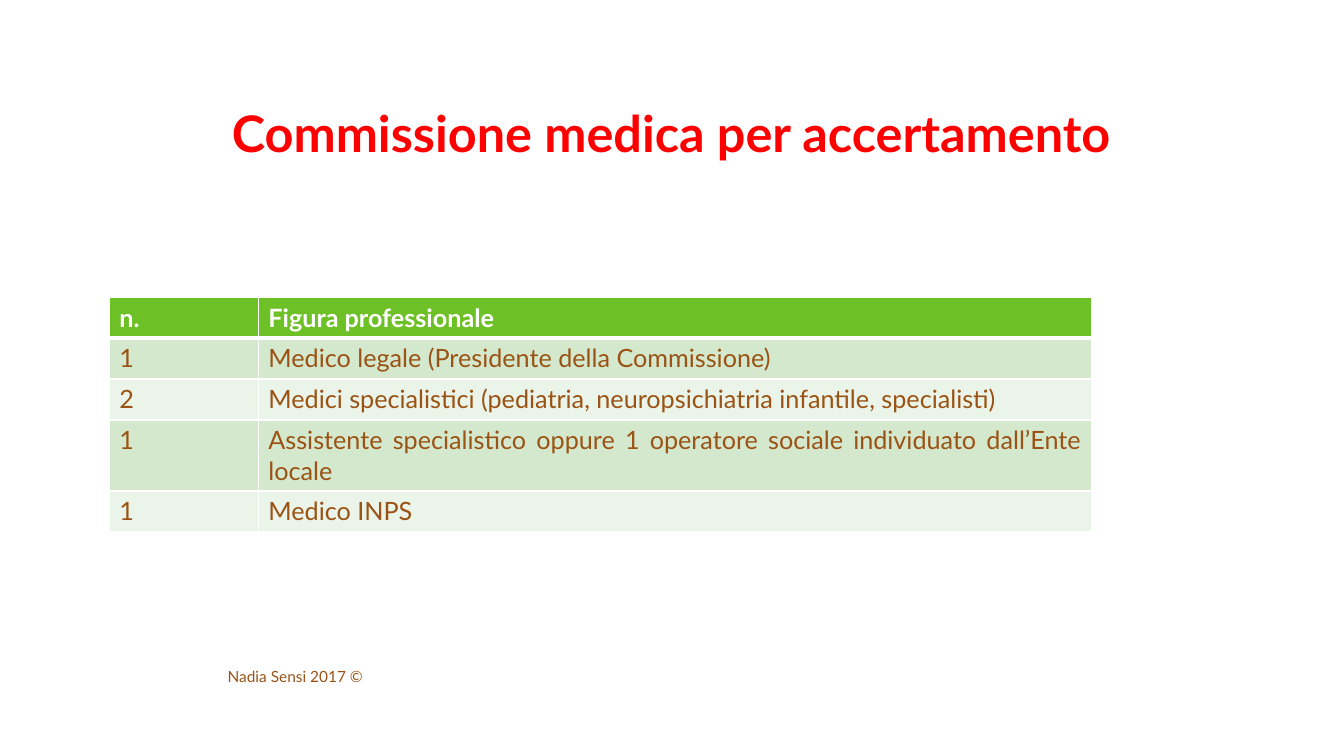
from dataclasses import dataclass
from typing import Any

from lxml import etree
from pptx import Presentation
from pptx.dml.color import RGBColor
from pptx.enum.text import MSO_ANCHOR, MSO_AUTO_SIZE, PP_ALIGN
from pptx.oxml.ns import qn
from pptx.util import Pt

LEFT, CENTER, JUSTIFY = PP_ALIGN.LEFT, PP_ALIGN.CENTER, PP_ALIGN.JUSTIFY
MIDDLE, BOTTOM = MSO_ANCHOR.MIDDLE, MSO_ANCHOR.BOTTOM
NO_AUTOFIT = MSO_AUTO_SIZE.NONE
TITLE_ONLY_LAYOUT = 5

RED, WHITE, BROWN = "FF0000", "FFFFFF", "9A5315"
GREEN, BAND_DARK, BAND_LIGHT = "6DC025", "D4E8CD", "EBF4E8"

TITLE_FORMAT = {"name": "Lato", "size": Pt(36), "bold": True}
HEADER_FORMAT = {"name": "Lato", "size": Pt(18), "bold": True}
BODY_FORMAT = {"name": "Lato", "size": Pt(18), "bold": False}
FOOTER_FORMAT = {"name": "Lato", "size": Pt(11), "bold": False}

ROW_HEIGHT = 29.25
COLUMN_WIDTHS = (106.5, 595)


@dataclass(frozen=True)
class Member:
    number: str
    role: str
    height: float = ROW_HEIGHT


MEMBERS = (
    Member("n.", "Figura professionale"),
    Member("1", "Medico legale (Presidente della Commissione)"),
    Member("2", "Medici specialistici (pediatria, neuropsichiatria infantile, specialisti)"),
    Member("1", "Assistente specialistico oppure 1 operatore sociale individuato dall’Ente locale", 50.75),
    Member("1", "Medico INPS"),
)


def color(value: str) -> RGBColor:
    return RGBColor.from_string(value)


def write(frame: Any, text: str, ink: str, alignment: Any, values: dict[str, Any]) -> Any:
    para = frame.paragraphs[0]
    para.alignment = alignment
    span = para.add_run()
    span.text = text
    for name, value in values.items():
        setattr(span.font, name, value)
    span.font.color.rgb = color(ink)
    return para


def place(box: Any, left: float, top: float, width: float, height: float) -> None:
    box.left, box.top, box.width, box.height = map(Pt, (left, top, width, height))


def set_borders(cell: Any, widths: dict[str, float]) -> None:
    properties = cell._tc.get_or_add_tcPr()
    for position, (side, width) in enumerate(widths.items()):
        line = etree.Element(qn(f"a:ln{side}"), w=str(int(Pt(width))))
        fill = etree.SubElement(line, qn("a:solidFill"))
        etree.SubElement(fill, qn("a:srgbClr"), val=WHITE)
        properties.insert(position, line)


def add_title(page: Any) -> None:
    title = page.shapes.title
    place(title, 83.5, 24, 792, 96)
    frame = title.text_frame
    frame.auto_size = NO_AUTOFIT
    frame.vertical_anchor = BOTTOM
    para = write(frame, "Commissione medica per accertamento", RED, CENTER, TITLE_FORMAT)
    para.line_spacing = 0.9


def add_members_table(page: Any) -> None:
    total_height = sum(member.height for member in MEMBERS)
    table = page.shapes.add_table(
        len(MEMBERS), len(COLUMN_WIDTHS),
        Pt(78), Pt(212.25), Pt(sum(COLUMN_WIDTHS)), Pt(total_height),
    ).table
    for column, width in zip(table.columns, COLUMN_WIDTHS):
        column.width = Pt(width)
    for index, member in enumerate(MEMBERS):
        table.rows[index].height = Pt(member.height)
        header = index == 0
        fill = GREEN if header else (BAND_DARK if index % 2 else BAND_LIGHT)
        ink = WHITE if header else BROWN
        values = HEADER_FORMAT if header else BODY_FORMAT
        borders = {"L": 1, "R": 1, "T": 3 if index == 1 else 1, "B": 3 if header else 1}
        for cell, text in zip(table.rows[index].cells, (member.number, member.role)):
            cell.fill.solid()
            cell.fill.fore_color.rgb = color(fill)
            set_borders(cell, borders)
            write(cell.text_frame, text, ink, JUSTIFY, values)


def add_footer(page: Any) -> None:
    box = page.shapes.add_textbox(Pt(155.5), Pt(474), Pt(468), Pt(18))
    frame = box.text_frame
    frame.word_wrap = True
    frame.vertical_anchor = MIDDLE
    write(frame, "Nadia Sensi 2017 ©", BROWN, LEFT, FOOTER_FORMAT)


def main() -> None:
    deck = Presentation()
    deck.slide_width, deck.slide_height = Pt(960), Pt(540)
    page = deck.slides.add_slide(deck.slide_layouts[TITLE_ONLY_LAYOUT])
    add_title(page)
    add_members_table(page)
    add_footer(page)
    deck.save("out.pptx")


if __name__ == "__main__":
    main()
